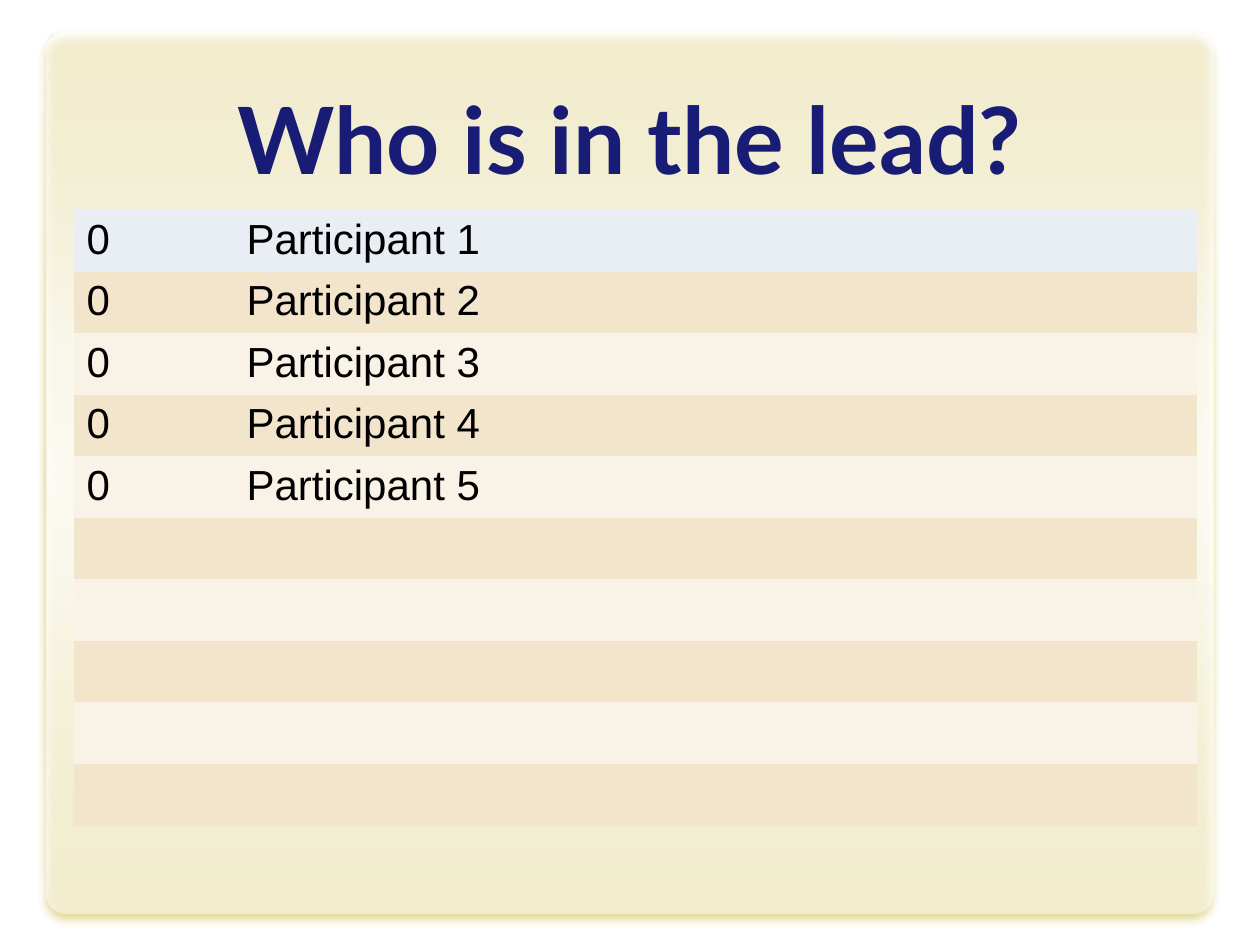
from lxml.etree import SubElement
from pptx import Presentation
from pptx.dml.color import RGBColor
from pptx.enum.shapes import MSO_SHAPE as SHAPE
from pptx.enum.text import MSO_ANCHOR as ANCHOR, MSO_AUTO_SIZE as AUTO, PP_ALIGN as ALIGN
from pptx.oxml.ns import qn
from pptx.util import Pt

PX = 914400 / 126
NO_STYLE = "{2D5ABB26-0587-4C30-8999-92F81FD0307C}"
PANEL_STOPS = [(0, 50), (35, 87), (50, 92), (60, 89), (100, 55)]
HEADER, BANDS = "E9EDF4", ("F9F3E7", "F3E5CC")
COLUMNS = (160, 401, 160, 402)
ROWS = 10
SCORES = [("0", f"Participant {n}") for n in range(1, 6)]


def px(n):
    """Turn pixels into EMU."""
    return round(n * PX)


def rgb(value):
    """Turn a hex string into a colour."""
    return RGBColor.from_string(value)


def style(font, color, **values):
    """Set the attributes of a font."""
    for name, value in values.items():
        setattr(font, name, value)
    font.color.rgb = rgb(color)


def add_color(parent, color, opacity):
    """Append a partly transparent colour to an XML element."""
    clr = SubElement(parent, qn("a:srgbClr"), val=color)
    SubElement(clr, qn("a:alpha"), val=str(opacity * 1000))


def add_panel(s, box):
    """Add the rounded translucent panel behind everything else."""
    sp = s.shapes.add_shape(SHAPE.ROUNDED_RECTANGLE, *map(px, box))
    sp.adjustments[0] = 0.022
    sp.line.fill.background()
    sp.fill.gradient()
    sp.fill.gradient_angle = 270
    stops = sp.fill._fill._gradFill.find(qn("a:gsLst"))
    stops.clear()
    for position, opacity in PANEL_STOPS:
        stop = SubElement(stops, qn("a:gs"), pos=str(position * 1000))
        add_color(stop, "FFFFFF", opacity)
    effects = SubElement(sp._element.spPr, qn("a:effectLst"))
    shadow = SubElement(effects, qn("a:outerShdw"), blurRad=str(Pt(5)),
                        dist=str(Pt(3.6)), dir="5400000", rotWithShape="0")
    add_color(shadow, "C5AF25", 90)
    s.shapes._spTree.insert(2, sp._element)


def add_title(s, box, text):
    """Place and format the title placeholder."""
    sp = s.shapes.title
    sp.left, sp.top, sp.width, sp.height = map(px, box)
    tf = sp.text_frame
    tf.text = text
    tf.auto_size, tf.vertical_anchor = AUTO.NONE, ANCHOR.BOTTOM
    p = tf.paragraphs[0]
    p.alignment = ALIGN.CENTER
    style(p.runs[0].font, "181C74", name="Lato", size=Pt(53), bold=True)


def add_scores(s, box):
    """Add the banded score table."""
    table = s.shapes.add_table(ROWS, len(COLUMNS), *map(px, box)).table
    table.first_row = table.horz_banding = False
    table._tbl.tblPr.find(qn("a:tableStyleId")).text = NO_STYLE
    for column, width in zip(table.columns, COLUMNS):
        column.width = px(width)
    for i, row in enumerate(table.rows):
        for cell in row.cells:
            cell.fill.solid()
            cell.fill.fore_color.rgb = rgb(BANDS[i % 2] if i else HEADER)
    for row, values in zip(table.rows, SCORES):
        for cell, value in zip(row.cells, values):
            r = cell.text_frame.paragraphs[0].add_run()
            r.text = value
            style(r.font, "000000", name="Arial", size=Pt(24))


def main():
    """Build and save the slide."""
    prs = Presentation()
    prs.slide_width, prs.slide_height = px(1260), px(945)
    s = prs.slides.add_slide(prs.slide_layouts[5])
    add_panel(s, (47, 32, 1166, 882))
    add_title(s, (63, 41, 1134, 158), "Who is in the lead?")
    add_scores(s, (74, 210, sum(COLUMNS), 616))
    prs.save("out.pptx")


if __name__ == "__main__":
    main()
